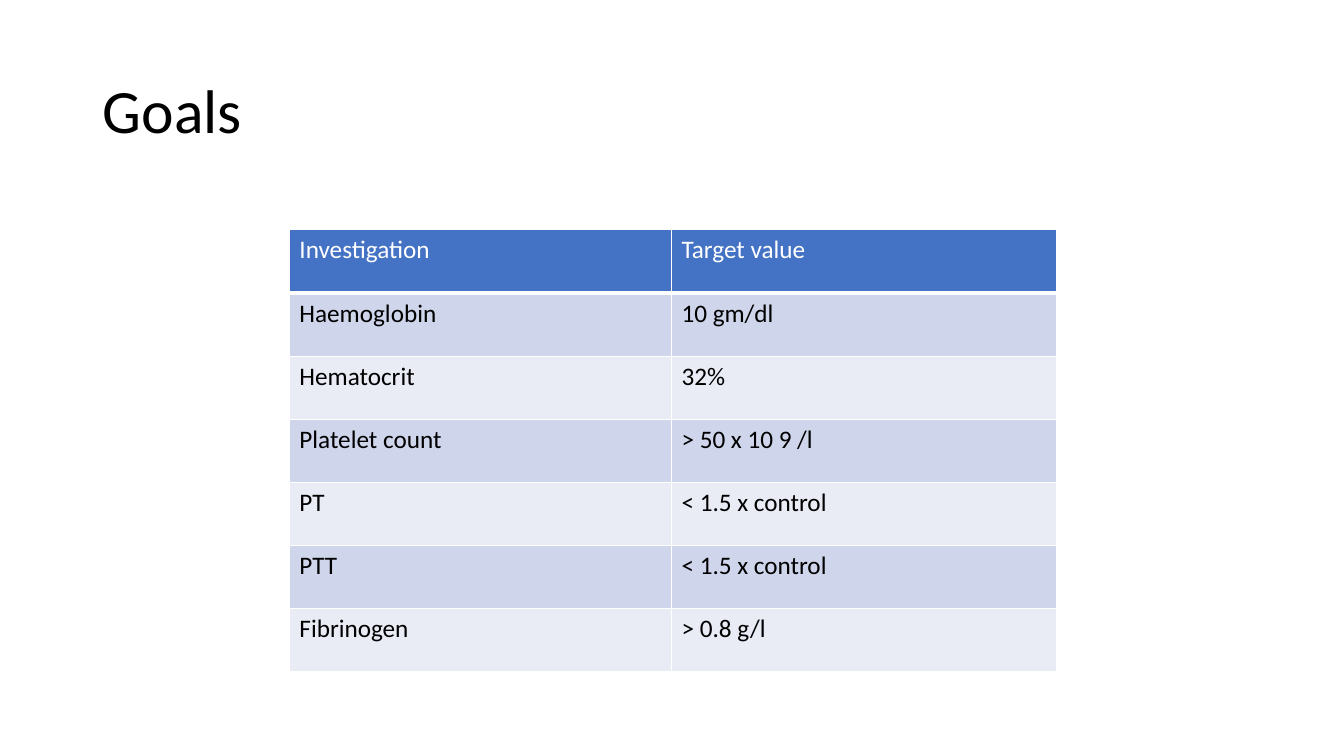
from dataclasses import dataclass
from lxml.etree import SubElement as Sub
from pptx import Presentation
from pptx.dml.color import RGBColor as Rgb
from pptx.enum.text import MSO_ANCHOR as Anchor, PP_ALIGN as Align
from pptx.oxml.ns import qn
from pptx.util import Inches, Pt


@dataclass(frozen=True)
class Theme:
    font: str = "Calibri"
    title: int = 44
    body: int = 18
    ink: str = "000000"
    white: str = "FFFFFF"
    head: str = "4472C4"
    bands: tuple = ("E9EBF5", "CFD5EA")
    thin: int = 1
    thick: int = 3


LOOK = Theme()
WIDE, HIGH = 13.33, 7.5
COLS = (3.79, 3.82)
ROW = 4.39 / 7
GOALS = (
    ("Investigation", "Target value"),
    ("Haemoglobin", "10 gm/dl"),
    ("Hematocrit", "32%"),
    ("Platelet count", "> 50 x 10 9 /l"),
    ("PT", "< 1.5 x control"),
    ("PTT", "< 1.5 x control"),
    ("Fibrinogen", "> 0.8 g/l"),
)


def write(frame, text, size, ink):
    para = frame.paragraphs[0]
    para.alignment = Align.LEFT
    run = para.add_run()
    run.text = text
    font = run.font
    font.name, font.size, font.bold = LOOK.font, Pt(size), False
    font.color.rgb = Rgb.from_string(ink)
    return para


def rule(cell, side, width):
    line = Sub(cell._tc.get_or_add_tcPr(), qn(f"a:ln{side}"), w=str(Pt(width)))
    Sub(Sub(line, qn("a:solidFill")), qn("a:srgbClr"), val=LOOK.white)


def head(slide, text):
    title = slide.shapes.title
    title.left, title.top = Inches(0.92), Inches(0.4)
    title.width, title.height = Inches(11.5), Inches(1.45)
    frame = title.text_frame
    frame.vertical_anchor = Anchor.MIDDLE
    frame.word_wrap = True
    write(frame, text, LOOK.title, LOOK.ink).line_spacing = 0.9


def fill(cell, text, row):
    first = row == 0
    edges = {"L": LOOK.thin, "R": LOOK.thin,
             "T": LOOK.thick if row == 1 else LOOK.thin,
             "B": LOOK.thick if first else LOOK.thin}
    for side, width in edges.items():
        rule(cell, side, width)
    cell.fill.solid()
    tint = LOOK.head if first else LOOK.bands[row % 2]
    cell.fill.fore_color.rgb = Rgb.from_string(tint)
    write(cell.text_frame, text, LOOK.body, LOOK.white if first else LOOK.ink)


def grid(slide, data, left, top):
    table = slide.shapes.add_table(
        len(data), len(COLS), Inches(left), Inches(top),
        Inches(sum(COLS)), Inches(ROW * len(data))).table
    for col, width in zip(table.columns, COLS):
        col.width = Inches(width)
    for r, texts in enumerate(data):
        table.rows[r].height = Inches(ROW)
        for c, text in enumerate(texts):
            fill(table.cell(r, c), text, r)


def main():
    deck = Presentation()
    deck.slide_width, deck.slide_height = Inches(WIDE), Inches(HIGH)
    slide = deck.slides.add_slide(deck.slide_layouts[5])
    head(slide, "Goals")
    grid(slide, GOALS, 2.87, 2.28)
    deck.save("out.pptx")


if __name__ == "__main__":
    main()
